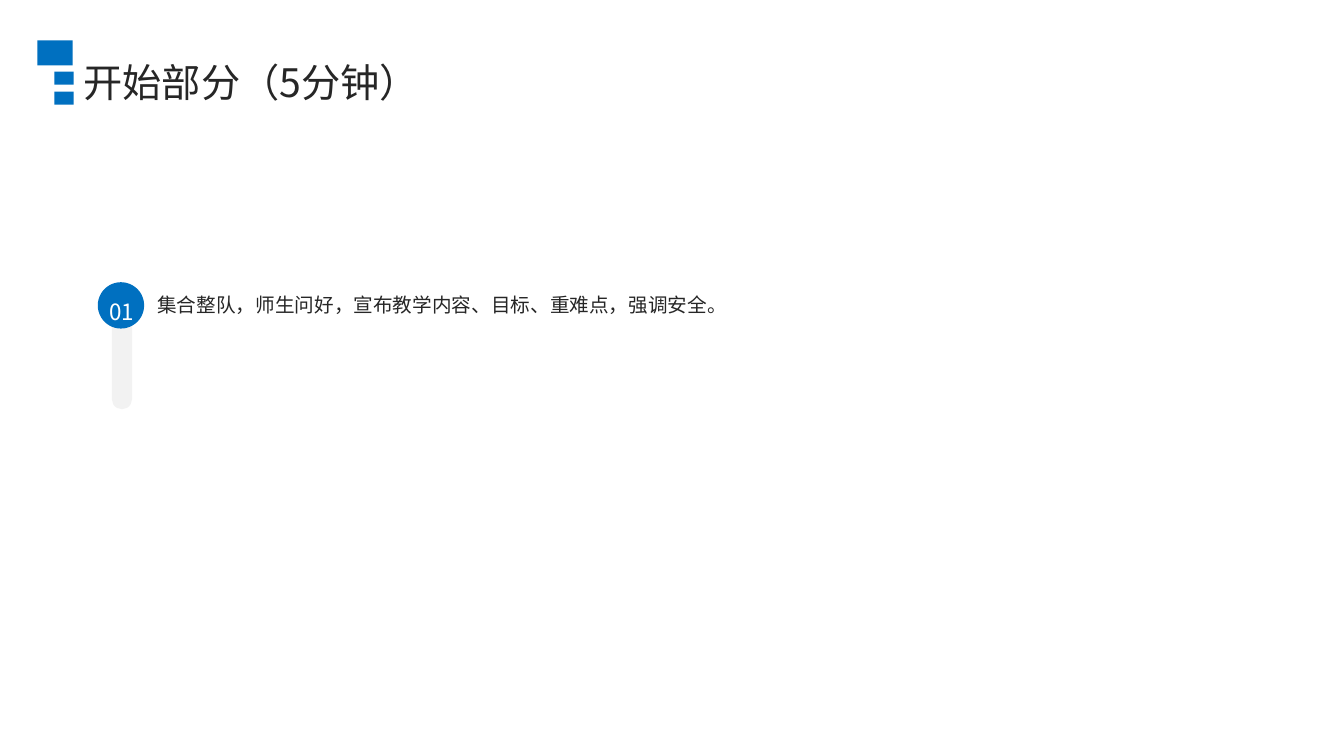
from lxml.etree import SubElement
from pptx import Presentation
from pptx.dml.color import RGBColor
from pptx.enum.shapes import MSO_SHAPE
from pptx.enum.text import MSO_ANCHOR, PP_ALIGN
from pptx.oxml.ns import qn
from pptx.util import Pt

PX = 9144  # EMU per px, 100 px to the inch
BLUE = RGBColor(0x00, 0x70, 0xC0)
GREY = RGBColor(0xF2, 0xF2, 0xF2)
DARK = RGBColor(0x26, 0x26, 0x26)
WHITE = RGBColor(0xFF, 0xFF, 0xFF)


class Page:
    face = "Noto Sans CJK SC"

    def __init__(self, slide):
        self.shapes = slide.shapes

    def shape(self, kind, box, color):
        item = self.shapes.add_shape(kind, *(n * PX for n in box))
        item.shadow.inherit = False
        item.fill.solid()
        item.fill.fore_color.rgb = color
        item.line.fill.background()
        return item

    def text(self, words, box, size, color, spacing,
             anchor=MSO_ANCHOR.MIDDLE, align=PP_ALIGN.LEFT):
        frame = self.shapes.add_textbox(*(n * PX for n in box)).text_frame
        frame.word_wrap = True
        frame.vertical_anchor = anchor
        frame.margin_left = frame.margin_right = 0
        frame.margin_top = frame.margin_bottom = 0
        para = frame.paragraphs[0]
        para.text = words
        para.alignment = align
        para.line_spacing = spacing
        font = para.font
        font.size = Pt(size)
        font.color.rgb = color
        font.name = self.face
        # East Asian typeface
        props = para._p.pPr.find(qn("a:defRPr"))
        SubElement(props, qn("a:ea"), typeface=self.face)


def main():
    deck = Presentation()
    deck.slide_width, deck.slide_height = 1333 * PX, 750 * PX
    page = Page(deck.slides.add_slide(deck.slide_layouts[6]))

    # Step marker and its text
    stem = page.shape(MSO_SHAPE.ROUNDED_RECTANGLE, (111, 283, 20, 123), GREY)
    stem.adjustments[0] = 0.5
    page.shape(MSO_SHAPE.OVAL, (97, 280, 46, 46), BLUE)
    page.text("集合整队，师生问好，宣布教学内容、目标、重难点，强调安全。",
              (156, 279, 1079, 329), 14, DARK, 1.5, anchor=MSO_ANCHOR.TOP)
    page.text("01", (105, 282, 32, 40), 16, WHITE, 1.5, align=PP_ALIGN.CENTER)

    # Title with its three blocks
    page.text("开始部分（5分钟）", (83, 53, 1188, 51), 28, DARK, 1.1)
    for box in ((37, 40, 35, 25), (54, 71, 19, 13), (54, 91, 19, 13)):
        page.shape(MSO_SHAPE.RECTANGLE, box, BLUE)

    deck.save("out.pptx")


if __name__ == "__main__":
    main()
